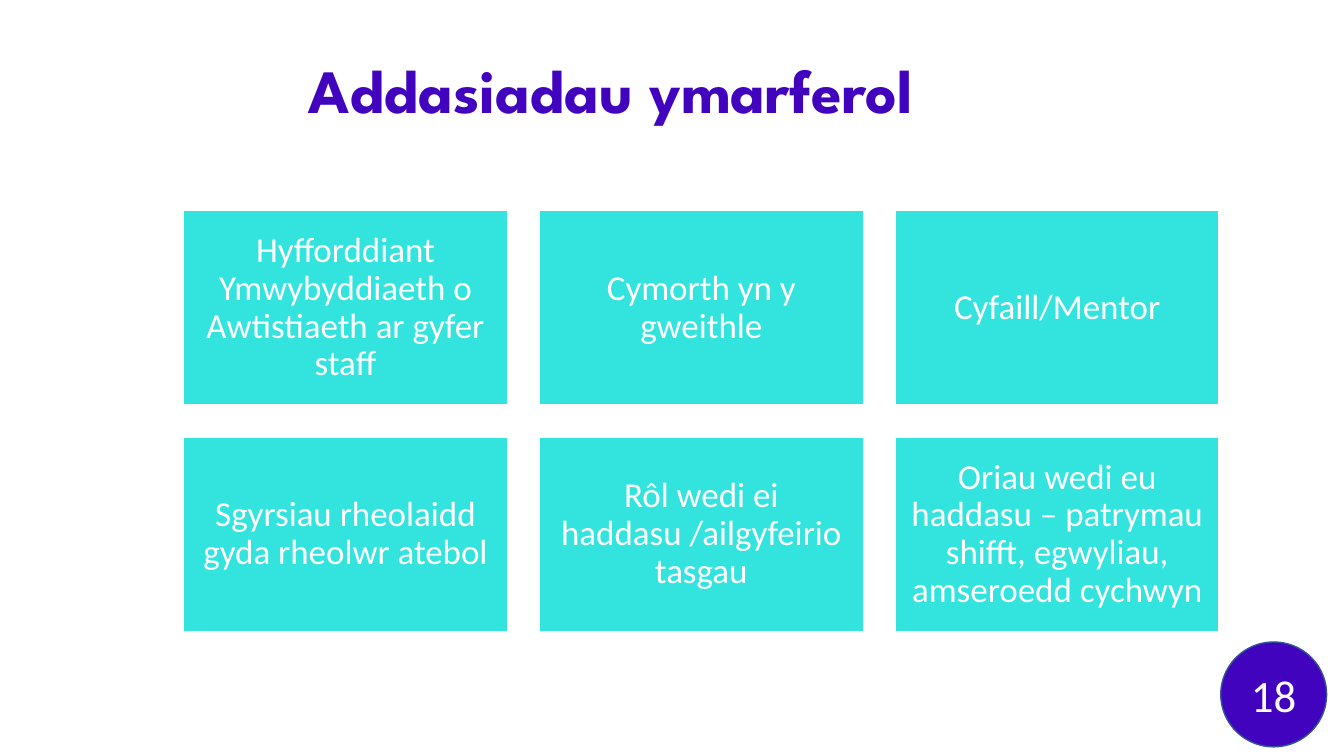
from pptx import Presentation
from pptx.dml.color import RGBColor
from pptx.enum.shapes import MSO_SHAPE as Preset
from pptx.enum.text import MSO_ANCHOR as Anchor, MSO_AUTO_SIZE as AutoSize, PP_ALIGN as Align
from pptx.util import Pt

COLOURS = {"purple": "4203BF", "turquoise": "33E4DE", "white": "FFFFFF", "navy": "325491"}

ADJUSTMENTS = [
    "Hyfforddiant Ymwybyddiaeth o Awtistiaeth ar gyfer staff",
    "Cymorth yn y gweithle",
    "Cyfaill/Mentor",
    "Sgyrsiau rheolaidd gyda rheolwr atebol",
    "Rôl wedi ei haddasu /ailgyfeirio tasgau",
    "Oriau wedi eu haddasu – patrymau shifft, egwyliau, amseroedd cychwyn",
]

# Card grid, in points
COLUMNS = 3
GRID_LEFT, GRID_TOP = 131.04, 150.48
CARD_WIDTH, CARD_HEIGHT = 231.4, 138.96
GAP = 22.8


def colour(name):
    return RGBColor.from_string(COLOURS[name])


def write(frame, text, size, text_colour, font="Calibri", bold=False, spacing=1.0):
    frame.word_wrap = True
    frame.auto_size = AutoSize.NONE
    frame.vertical_anchor = Anchor.MIDDLE
    paragraph = frame.paragraphs[0]
    paragraph.alignment = Align.CENTER
    paragraph.line_spacing = spacing
    paragraph.space_before = Pt(0)
    run = paragraph.add_run()
    run.text = text
    run.font.name = font
    run.font.size = Pt(size)
    run.font.bold = bold
    run.font.color.rgb = colour(text_colour)


def add_heading(slide, text):
    heading = slide.shapes.title
    heading.left, heading.top = Pt(GRID_LEFT), Pt(41)
    heading.width, heading.height = Pt(611.3), Pt(51)
    write(heading.text_frame, text, 44, "purple", "League Spartan", True, 0.9)


def add_panel(slide, preset, left, top, width, height, fill, outline):
    panel = slide.shapes.add_shape(preset, Pt(left), Pt(top), Pt(width), Pt(height))
    panel.shadow.inherit = False
    panel.fill.solid()
    panel.fill.fore_color.rgb = colour(fill)
    panel.line.color.rgb = colour(outline)
    panel.line.width = Pt(1)
    return panel.text_frame


def add_card(slide, index, text):
    row, column = divmod(index, COLUMNS)
    left = GRID_LEFT + column * (CARD_WIDTH + GAP)
    top = GRID_TOP + row * (CARD_HEIGHT + GAP)
    frame = add_panel(slide, Preset.RECTANGLE, left, top, CARD_WIDTH, CARD_HEIGHT,
                      "turquoise", "white")
    frame.margin_left = frame.margin_right = Pt(7.5)
    frame.margin_top = frame.margin_bottom = Pt(7.5)
    write(frame, text, 25, "white", spacing=0.9)


def add_page_badge(slide, number):
    frame = add_panel(slide, Preset.OVAL, 872, 458.6, 75.6, 74.9, "purple", "navy")
    write(frame, number, 32, "white")


def main():
    deck = Presentation()
    deck.slide_width, deck.slide_height = Pt(960), Pt(540)
    slide = deck.slides.add_slide(deck.slide_layouts.get_by_name("Title Only"))

    # Heading
    add_heading(slide, "Addasiadau ymarferol")

    # Adjustment cards
    for index, adjustment in enumerate(ADJUSTMENTS):
        add_card(slide, index, adjustment)

    # Page number
    add_page_badge(slide, "18")

    deck.save("out.pptx")


if __name__ == "__main__":
    main()
